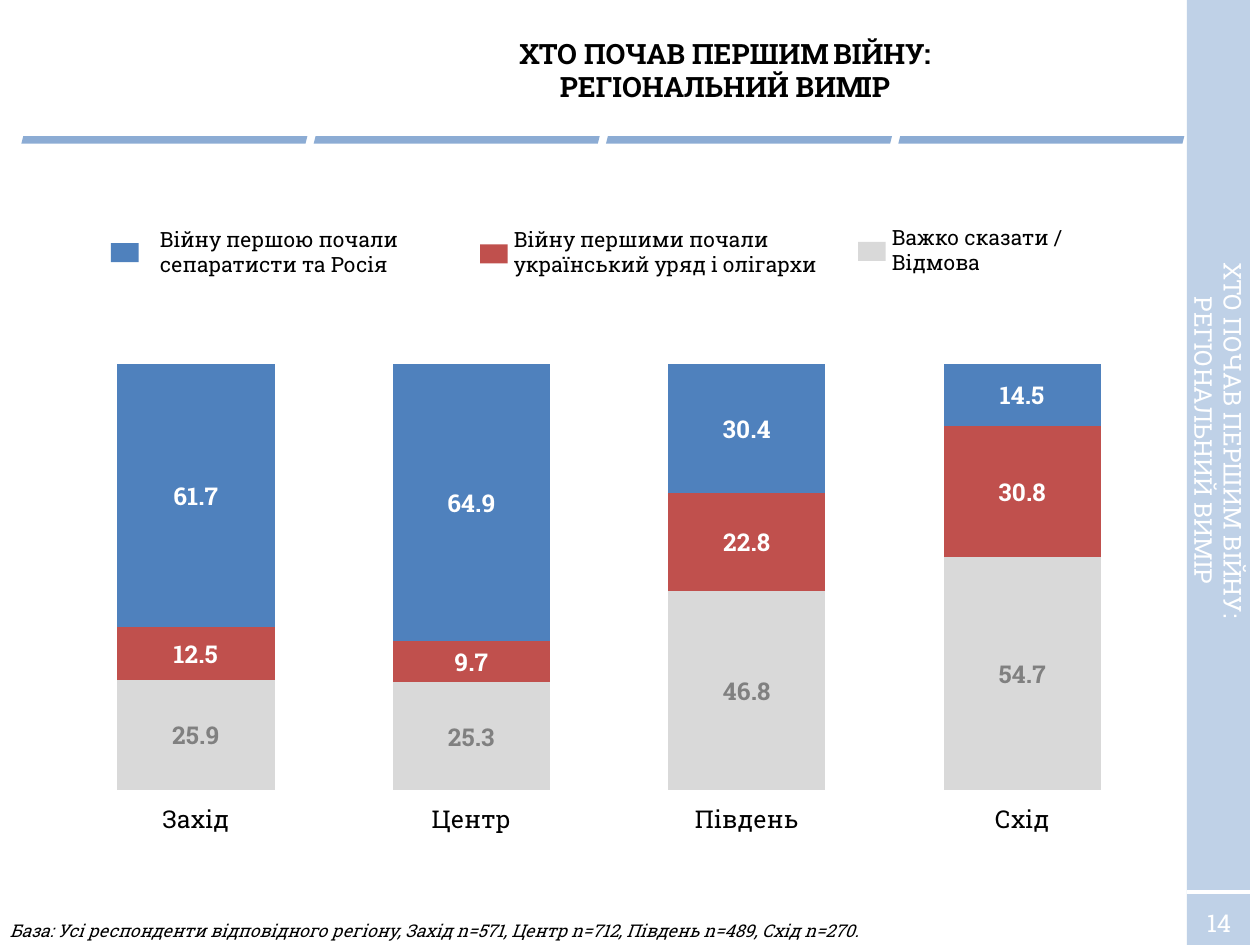
from copy import deepcopy

from lxml.etree import SubElement
from pptx import Presentation
from pptx.chart.data import CategoryChartData
from pptx.dml.color import RGBColor
from pptx.enum.chart import XL_CHART_TYPE, XL_TICK_MARK
from pptx.enum.shapes import MSO_CONNECTOR, MSO_SHAPE
from pptx.enum.text import MSO_ANCHOR, PP_ALIGN
from pptx.oxml import parse_xml
from pptx.oxml.ns import nsdecls, qn
from pptx.util import Inches, Pt

COLORS = {
    "band": "95B3D7",
    "blue": "4F81BD",
    "red": "C0504D",
    "grey": "D9D9D9",
    "grey_label": "808080",
    "white": "FFFFFF",
    "black": "000000",
}
FONT = "Roboto Slab"
HEADING = "ХТО ПОЧАВ ПЕРШИМ ВІЙНУ:\nРЕГІОНАЛЬНИЙ ВИМІР"
BASE = ("База: Усі респонденти відповідного регіону, "
        "Захід n=571, Центр n=712, Південь n=489, Схід n=270.")
REGIONS = ["Захід", "Центр", "Південь", "Схід"]
ANSWERS = [
    ("Series 1", [25.9, 25.3, 46.8, 54.7], "grey", "grey_label"),
    ("Series 2", [12.5, 9.7, 22.8, 30.8], "red", "white"),
    ("Series 3", [61.7, 64.9, 30.4, 14.5], "blue", "white"),
]
LEGEND = [
    ("blue", (0.88, 1.93), (1.17, 1.75, 2.26, 0.5),
     "Війну першою почали сепаратисти та Росія"),
    ("red", (3.81, 1.94), (3.98, 1.75, 2.83, 0.5),
     "Війну першими почали український уряд i олігархи"),
    ("grey", (6.81, 1.92), (6.98, 1.73, 1.68, 0.5),
     "Важко сказати / Відмова"),
]
PLOT = {"x": 0.02, "y": 0.02, "w": 0.96, "h": 0.87}


def rgb(name):
    return RGBColor.from_string(COLORS[name])


def inches(*lengths):
    return [Inches(length) for length in lengths]


def style_font(font, size, color="black", **formats):
    for key, value in {"name": FONT, "size": Pt(size), **formats}.items():
        setattr(font, key, value)
    font.color.rgb = rgb(color)


def add_block(slide, kind, place, color, opacity=100):
    block = slide.shapes.add_shape(kind, *inches(*place))
    block.shadow.inherit = False
    block.fill.solid()
    block.fill.fore_color.rgb = rgb(color)
    block.line.fill.background()
    if opacity < 100:
        tint = block.fill._xPr.find(".//" + qn("a:srgbClr"))
        SubElement(tint, qn("a:alpha"), val=str(opacity * 1000))


def add_text(slide, place, text, size, color="black", align=PP_ALIGN.LEFT,
             anchor=MSO_ANCHOR.TOP, rotation=0, **formats):
    box = slide.shapes.add_textbox(*inches(*place))
    box.rotation = rotation
    frame = box.text_frame
    for key, value in {"word_wrap": True, "vertical_anchor": anchor}.items():
        setattr(frame, key, value)
    paragraph = frame.paragraphs[0]
    paragraph.text = text
    paragraph.alignment = align
    for run in paragraph.runs:
        style_font(run.font, size, color, **formats)
    for line_break in paragraph._p.findall(qn("a:br")):
        line_break.append(deepcopy(paragraph.runs[0]._r.rPr))


def add_frame(slide):
    add_block(slide, MSO_SHAPE.RECTANGLE, (9.42, 0, 0.5, 7.5), "band", 60)
    for column in range(4):
        add_block(slide, MSO_SHAPE.PARALLELOGRAM,
                  (0.17 + 2.32 * column, 1.08, 2.27, 0.06), "blue", 65)
    add_text(slide, (9.38, 7.15, 0.59, 0.34), "14", 14, "white",
             PP_ALIGN.CENTER, MSO_ANCHOR.MIDDLE)
    divider = slide.shapes.add_connector(
        MSO_CONNECTOR.STRAIGHT, *inches(9.42, 7.08, 9.92, 7.08))
    divider.line.color.rgb = rgb("white")
    divider.line.width = Pt(2)
    SubElement(divider._element.spPr, qn("a:effectLst"))


def set_plot_layout(chart):
    area = chart._chartSpace.chart.plotArea
    for layout in area.findall(qn("c:layout")):
        area.remove(layout)
    modes = '<c:layoutTarget val="inner"/><c:xMode val="edge"/><c:yMode val="edge"/>'
    sizes = "".join(f'<c:{key} val="{value}"/>' for key, value in PLOT.items())
    area.insert(0, parse_xml(
        f'<c:layout {nsdecls("c")}><c:manualLayout>{modes}{sizes}'
        '</c:manualLayout></c:layout>'))


def add_region_chart(slide):
    data = CategoryChartData(number_format="General")
    data.categories = REGIONS
    for name, values, _, _ in ANSWERS:
        data.add_series(name, values)
    chart = slide.shapes.add_chart(
        XL_CHART_TYPE.COLUMN_STACKED_100, *inches(0.28, 2.81, 9.11, 3.89), data).chart
    style_font(chart.font, 18, name="Calibri")
    chart.has_legend = False
    chart.has_title = False

    chart.value_axis.visible = False
    chart.value_axis.has_major_gridlines = False
    regions = chart.category_axis
    regions.major_tick_mark = XL_TICK_MARK.OUTSIDE
    regions.format.line.fill.background()
    style_font(regions.tick_labels.font, 14)

    plot = chart.plots[0]
    for key, value in {"gap_width": 75, "overlap": 100,
                       "vary_by_categories": False}.items():
        setattr(plot, key, value)
    for series, (_, _, color, label_color) in zip(plot.series, ANSWERS):
        series.format.fill.solid()
        series.format.fill.fore_color.rgb = rgb(color)
        series.data_labels.show_value = True
        style_font(series.data_labels.font, 14, label_color, bold=True)
    set_plot_layout(chart)


def add_legend(slide):
    for color, corner, place, answer in LEGEND:
        add_block(slide, MSO_SHAPE.RECTANGLE, (*corner, 0.22, 0.15), color)
        add_text(slide, place, answer, 12)


def main():
    deck = Presentation()
    deck.slide_width, deck.slide_height = inches(10, 7.5)
    slide = deck.slides.add_slide(deck.slide_layouts[6])
    add_frame(slide)
    add_text(slide, (2.17, 0.18, 7.17, 0.75), HEADING, 16,
             align=PP_ALIGN.CENTER, anchor=MSO_ANCHOR.MIDDLE, bold=True)
    add_text(slide, (-0.02, 7.25, 9.42, 0.27), BASE, 10, italic=True)
    add_text(slide, (6.92, 3.21, 5.5, 0.57), HEADING, 14, "white",
             PP_ALIGN.CENTER, rotation=90)
    add_region_chart(slide)
    add_legend(slide)
    deck.save("out.pptx")


if __name__ == "__main__":
    main()
